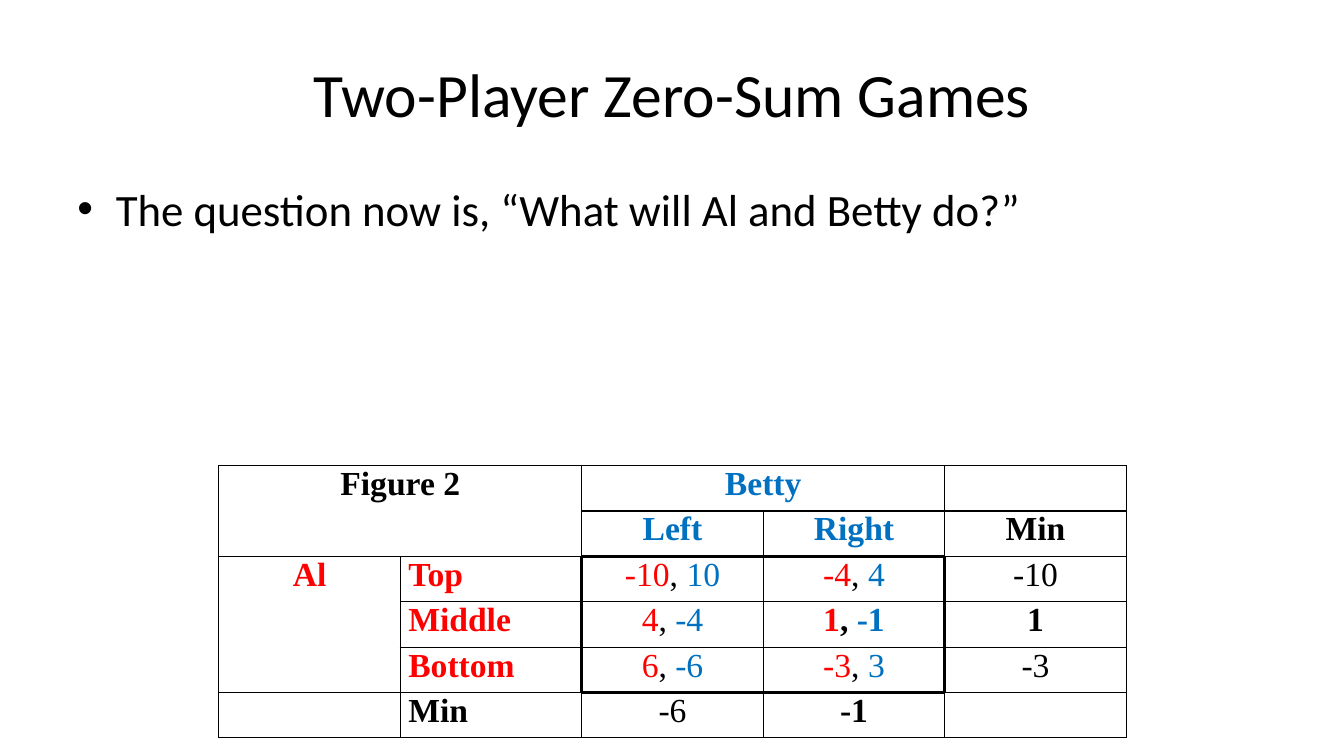
from dataclasses import dataclass

import pptx
import pptx.dml.color
import pptx.enum.text
import pptx.oxml
import pptx.oxml.ns
import pptx.util

Inches = pptx.util.Inches
Align = pptx.enum.text.PP_ALIGN
Anchor = pptx.enum.text.MSO_ANCHOR


@dataclass(frozen=True)
class Theme:
    black: str = "000000"
    red: str = "FF0000"
    blue: str = "0070C0"
    heading_font: str = "Calibri"
    table_font: str = "Times New Roman"
    title_size: float = 44
    body_size: float = 32
    table_size: float = 24
    thin: float = 1
    thick: float = 2.25


THEME = Theme()


@dataclass(frozen=True)
class Span:
    text: str
    color: str = THEME.black
    bold: bool = True


@dataclass(frozen=True)
class Entry:
    row: int
    column: int
    spans: tuple[Span, ...]
    align: Align = Align.CENTER
    row_span: int = 1
    column_span: int = 1


@dataclass(frozen=True)
class TextBlock:
    text: str
    top: float
    height: float
    size: float
    frame_format: dict
    paragraph_format: dict
    bulleted: bool = False


ROWS, COLUMNS = 6, 5
ROW_HEIGHT, COLUMN_WIDTH = 0.45, 1.8
PAYOFF_ROWS, PAYOFF_COLUMNS = range(2, 5), range(2, 4)

BLOCKS = (
    TextBlock("Two-Player Zero-Sum Games", 0.3, 1.25, THEME.title_size,
              {"vertical_anchor": Anchor.MIDDLE}, {"alignment": Align.CENTER}),
    TextBlock("The question now is, “What will Al and Betty do?”", 1.75, 4.95,
              THEME.body_size, {"vertical_anchor": Anchor.TOP},
              {"alignment": Align.LEFT, "space_before": pptx.util.Pt(6.4)}, True),
)


def payoff(row: int, column: int, al: int, betty: int, bold: bool = False) -> Entry:
    """Al's payoff in red, then Betty's in blue."""
    return Entry(row, column, (Span(str(al), THEME.red, bold), Span(", ", bold=bold),
                               Span(str(betty), THEME.blue, bold)))


def label(row: int, column: int, text: str, color: str = THEME.black,
          bold: bool = True, **layout) -> Entry:
    return Entry(row, column, (Span(text, color, bold),), **layout)


ENTRIES = (
    # Headings
    label(0, 0, "Figure 2", row_span=2, column_span=2),
    label(0, 2, "Betty", THEME.blue, column_span=2),
    label(1, 2, "Left", THEME.blue),
    label(1, 3, "Right", THEME.blue),
    label(1, 4, "Min"),
    label(2, 0, "Al", THEME.red, row_span=3),
    label(2, 1, "Top", THEME.red, align=Align.LEFT),
    label(3, 1, "Middle", THEME.red, align=Align.LEFT),
    label(4, 1, "Bottom", THEME.red, align=Align.LEFT),
    label(5, 1, "Min", align=Align.LEFT),
    # Payoffs
    payoff(2, 2, -10, 10),
    payoff(2, 3, -4, 4),
    payoff(3, 2, 4, -4),
    payoff(3, 3, 1, -1, bold=True),
    payoff(4, 2, 6, -6),
    payoff(4, 3, -3, 3),
    # Minimums
    label(2, 4, "-10", bold=False),
    label(3, 4, "1"),
    label(4, 4, "-3", bold=False),
    label(5, 2, "-6", bold=False),
    label(5, 3, "-1"),
)


def apply_format(target, values: dict) -> None:
    for name, value in values.items():
        setattr(target, name, value)


def add_span(paragraph, span: Span, font: str, size: float) -> None:
    run = paragraph.add_run()
    run.text = span.text
    apply_format(run.font, {"name": font, "size": pptx.util.Pt(size), "bold": span.bold})
    run.font.color.rgb = pptx.dml.color.RGBColor.from_string(span.color)


def add_text_block(page, block: TextBlock) -> None:
    box = page.shapes.add_textbox(Inches(0.67), Inches(block.top),
                                  Inches(12), Inches(block.height))
    apply_format(box.text_frame, {"word_wrap": True, **block.frame_format})
    paragraph = box.text_frame.paragraphs[0]
    apply_format(paragraph, block.paragraph_format)
    if block.bulleted:
        properties = paragraph._p.get_or_add_pPr()
        properties.set("marL", str(Inches(0.38)))
        properties.set("indent", str(Inches(-0.38)))
        namespace = pptx.oxml.ns.nsdecls("a")
        for markup in (f'<a:buFont {namespace} typeface="Arial"/>',
                       f'<a:buChar {namespace} char="•"/>'):
            properties.append(pptx.oxml.parse_xml(markup))
    add_span(paragraph, Span(block.text, bold=False), THEME.heading_font, block.size)


def is_payoff(row: int, column: int) -> bool:
    return row in PAYOFF_ROWS and column in PAYOFF_COLUMNS


def set_borders(cell, row: int, column: int) -> None:
    """Thick lines run where the payoff block meets the other cells."""
    neighbors = {"L": (row, column - 1), "R": (row, column + 1),
                 "T": (row - 1, column), "B": (row + 1, column)}
    properties = cell._tc.get_or_add_tcPr()
    for index, (side, neighbor) in enumerate(neighbors.items()):
        on_edge = is_payoff(row, column) != is_payoff(*neighbor)
        width = pptx.util.Pt(THEME.thick if on_edge else THEME.thin)
        properties.insert(index, pptx.oxml.parse_xml(
            f'<a:ln{side} {pptx.oxml.ns.nsdecls("a")} w="{width}"><a:solidFill>'
            f'<a:srgbClr val="{THEME.black}"/></a:solidFill></a:ln{side}>'))


def add_game_table(page) -> None:
    table = page.shapes.add_table(
        ROWS, COLUMNS, Inches(2.17), Inches(4.62),
        Inches(COLUMNS * COLUMN_WIDTH), Inches(ROWS * ROW_HEIGHT)).table
    apply_format(table, {"first_row": False, "horz_banding": False})
    for column in table.columns:
        column.width = Inches(COLUMN_WIDTH)
    for row_index, row in enumerate(table.rows):
        row.height = Inches(ROW_HEIGHT)
        for column_index, cell in enumerate(row.cells):
            apply_format(cell, {"margin_left": Inches(0.08), "margin_right": Inches(0.08),
                                "margin_top": 0, "margin_bottom": 0})
            cell.fill.background()
            set_borders(cell, row_index, column_index)
    for entry in ENTRIES:
        cell = table.cell(entry.row, entry.column)
        if entry.row_span > 1 or entry.column_span > 1:
            cell.merge(table.cell(entry.row + entry.row_span - 1,
                                  entry.column + entry.column_span - 1))
        paragraph = cell.text_frame.paragraphs[0]
        paragraph.alignment = entry.align
        for span in entry.spans:
            add_span(paragraph, span, THEME.table_font, THEME.table_size)


def main() -> None:
    deck = pptx.Presentation()
    apply_format(deck, {"slide_width": Inches(13.33), "slide_height": Inches(7.5)})
    page = deck.slides.add_slide(deck.slide_layouts[6])
    for block in BLOCKS:
        add_text_block(page, block)
    add_game_table(page)
    deck.save("out.pptx")


if __name__ == "__main__":
    main()
